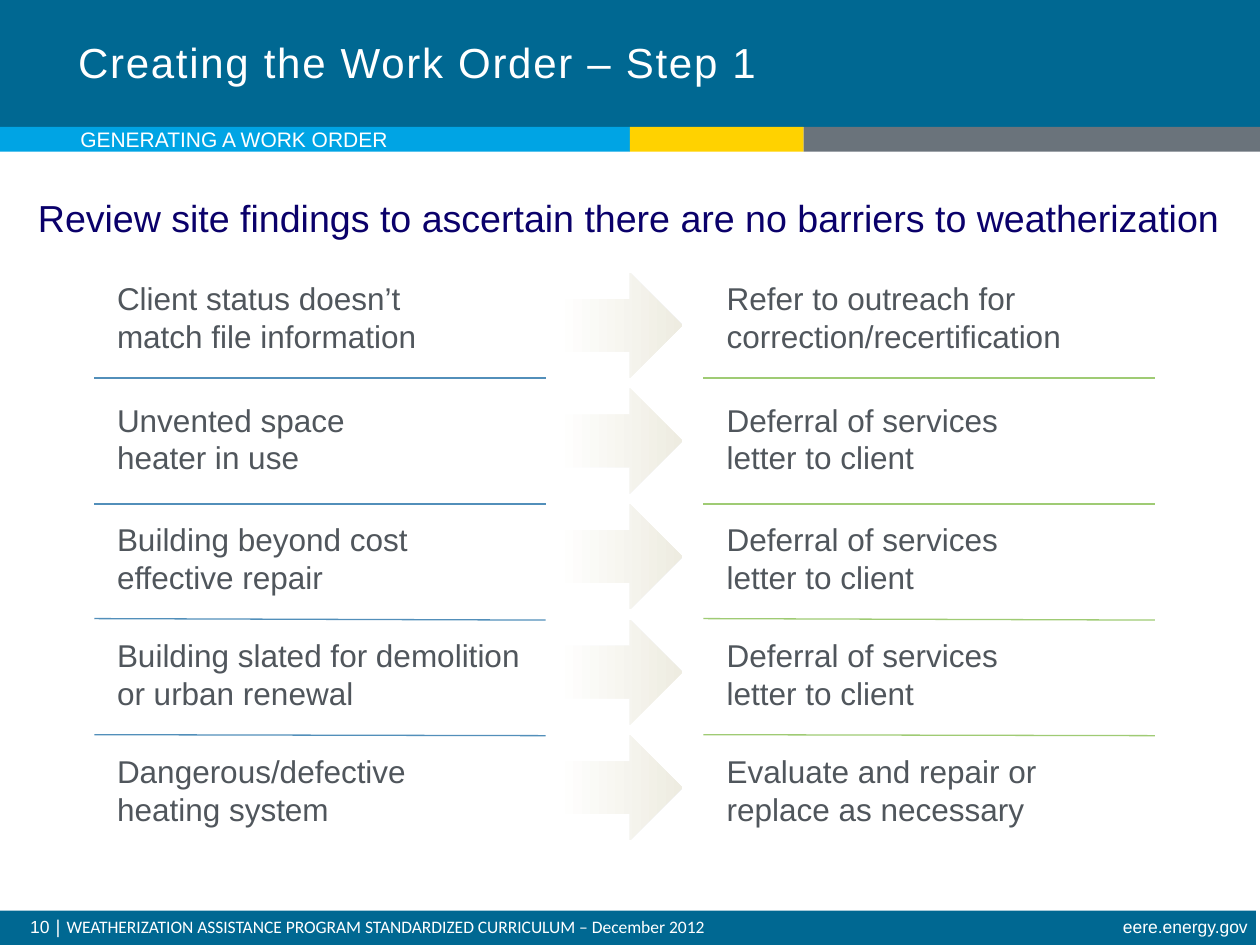
from lxml import etree
from pptx import Presentation
from pptx.dml.color import RGBColor
from pptx.enum.shapes import MSO_CONNECTOR, MSO_SHAPE
from pptx.enum.text import MSO_ANCHOR, MSO_AUTO_SIZE, PP_ALIGN
from pptx.oxml.ns import qn
from pptx.util import Cm, Pt


def color(value):
    return RGBColor.from_string(value)


def add_text(left, top, width, height, text, size, text_color):
    frame = slide.shapes.add_textbox(Cm(left), Cm(top), Cm(width), Cm(height)).text_frame
    frame.word_wrap = True
    frame.text = text
    paragraph = frame.paragraphs[0]
    paragraph.font.name = "Arial"
    paragraph.font.size = Pt(size)
    paragraph.font.color.rgb = color(text_color)
    return frame


presentation = Presentation()
presentation.slide_width = Cm(25.4)
presentation.slide_height = Cm(19.05)
slide = presentation.slides.add_slide(presentation.slide_layouts[5])

bands = [
    (0, 0, 25.4, 2.56, "006892"),
    (-0.08, 18.36, 25.4, 0.69, "006892"),
    (0, 2.56, 12.7, 0.5, "00A4E4"),
    (12.7, 2.56, 3.5, 0.5, "FFD200"),
    (16.2, 2.56, 9.2, 0.5, "6A737B"),
]
for left, top, width, height, fill in bands:
    band = slide.shapes.add_shape(MSO_SHAPE.RECTANGLE, Cm(left), Cm(top), Cm(width), Cm(height))
    band.shadow.inherit = False
    band.fill.solid()
    band.fill.fore_color.rgb = color(fill)
    band.line.fill.background()

title = slide.shapes.title
slide.shapes._spTree.append(title._element)
title.left, title.top, title.width, title.height = Cm(1.32), Cm(0), Cm(15.2), Cm(2.51)
title.text_frame.text = "Creating the Work Order – Step 1"
title.text_frame.auto_size = MSO_AUTO_SIZE.NONE
title.text_frame.vertical_anchor = MSO_ANCHOR.MIDDLE
paragraph = title.text_frame.paragraphs[0]
paragraph.alignment = PP_ALIGN.LEFT
paragraph.line_spacing = Pt(28)
paragraph.font.name = "Arial"
paragraph.font.size = Pt(24)
paragraph.font.color.rgb = color("FFFFFF")
paragraph.runs[0]._r.get_or_add_rPr().set("spc", "100")

section = add_text(1.62, 2.49, 17.58, 0.64, "GENERATING A WORK ORDER", 12, "FFFFFF")
section.margin_left = section.margin_right = section.margin_top = section.margin_bottom = 0
section.vertical_anchor = MSO_ANCHOR.MIDDLE

heading = add_text(
    0.2, 3.81, 24.97, 1.17,
    "Review site findings to ascertain there are no barriers to weatherization", 21.5, "0A006A",
)
heading.paragraphs[0].alignment = PP_ALIGN.CENTER

rows = [
    (5.51, "Client status doesn’t match file information", 7.82,
     "Refer to outreach for correction/recertification"),
    (7.95, "Unvented space\vheater in use", 9.32, "Deferral of services\vletter to client"),
    (10.36, "Building beyond cost effective repair", 7.62, "Deferral of services\vletter to client"),
    (12.7, "Building slated for demolition or urban renewal", 8.89,
     "Deferral of services\vletter to client"),
    (15.04, "Dangerous/defective heating system", 7.82, "Evaluate and repair or\vreplace as necessary"),
]
for index, (top, finding, finding_width, action) in enumerate(rows):
    add_text(2.11, top, finding_width, 1.8, finding, 18, "50565C")
    add_text(14.4, top, 9, 1.8, action, 18, "50565C")
    arrow = slide.shapes.add_shape(
        MSO_SHAPE.RIGHT_ARROW, Cm(11.22), Cm(5.5 + 2.33 * index), Cm(2.54), Cm(2.12)
    )
    arrow.shadow.inherit = False
    arrow.line.fill.background()
    arrow.fill.gradient()
    arrow.fill.gradient_angle = 0
    for stop, position, stop_color in zip(arrow.fill.gradient_stops, (0, 1), ("FFFFFF", "EEECE1")):
        stop.position = position
        stop.color.rgb = color(stop_color)

for left, line_color in ((14.18, "9FCB74"), (1.9, "528FBA")):
    for start, end in ((7.62, 7.62), (10.16, 10.16), (12.47, 12.5), (14.81, 14.83)):
        divider = slide.shapes.add_connector(
            MSO_CONNECTOR.STRAIGHT, Cm(left), Cm(start), Cm(left + 9.1), Cm(end)
        )
        divider.line.color.rgb = color(line_color)
        divider.line.width = Pt(0.75)
        etree.SubElement(divider._element.spPr, qn("a:effectLst"))

footer = add_text(0.36, 18.39, 20.24, 0.66, "10", 10, "FFFFFF").paragraphs[0]
footer.line_spacing = 0.9
footer.runs[0].font.name = "Arial"
for text, font_name in (
    (" | ", "DejaVu Sans"),
    ("WEATHERIZATION ASSISTANCE PROGRAM STANDARDIZED CURRICULUM – December 2012", "Calibri"),
):
    run = footer.add_run()
    run.text = text
    run.font.name = font_name

website = add_text(15.21, 18.39, 10.19, 0.66, "eere.energy.gov", 10, "FFFFFF").paragraphs[0]
website.alignment = PP_ALIGN.RIGHT
website.line_spacing = 0.9

presentation.save("out.pptx")
